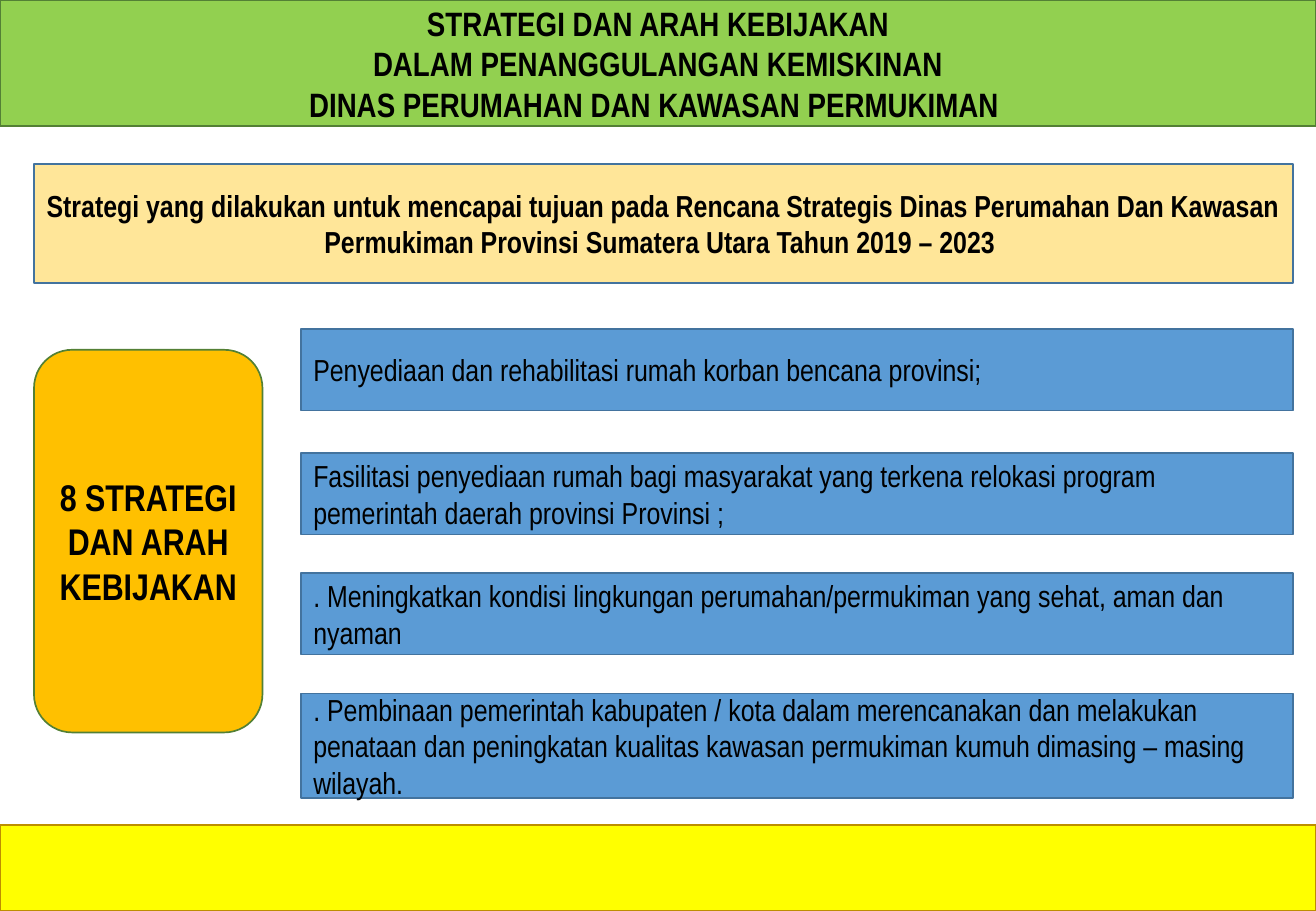
from dataclasses import dataclass

import pptx
import pptx.dml.color
import pptx.enum.shapes
import pptx.enum.text
import pptx.presentation
import pptx.shapes.autoshape
import pptx.slide
import pptx.util

RGBColor = pptx.dml.color.RGBColor
Align = pptx.enum.text.PP_ALIGN
Preset = pptx.enum.shapes.MSO_SHAPE

BLACK = RGBColor(0x00, 0x00, 0x00)
GREEN = RGBColor(0x92, 0xD0, 0x50)
DARK_GREEN = RGBColor(0x53, 0x80, 0x35)
YELLOW = RGBColor(0xFF, 0xFF, 0x00)
DARK_GOLD = RGBColor(0xBD, 0x8E, 0x00)
CREAM = RGBColor(0xFF, 0xE6, 0x99)
BLUE = RGBColor(0x5B, 0x9B, 0xD5)
DARK_BLUE = RGBColor(0x43, 0x73, 0x9E)
ORANGE = RGBColor(0xFF, 0xC0, 0x00)

FONT = "Arial Narrow"
CELL = pptx.util.Inches(0.1)
COLUMNS = 108.3
ROWS = 75
LEFT = 2.8
RIGHT = 106.4
STRATEGY_LEFT = 24.8


@dataclass(frozen=True)
class Panel:
    column: float
    row: float
    columns: float
    rows: float
    fill: RGBColor
    line: RGBColor
    text: str = ""
    size: int = 18
    bold: bool = True
    align: Align = Align.CENTER
    preset: Preset = Preset.RECTANGLE


def strategy(row: float, rows: float, text: str) -> Panel:
    return Panel(STRATEGY_LEFT, row, RIGHT - STRATEGY_LEFT, rows, BLUE, DARK_BLUE,
                 text, bold=False, align=Align.LEFT)


HEADER = Panel(
    0, 0, COLUMNS, 10.4, GREEN, DARK_GREEN,
    "STRATEGI DAN ARAH KEBIJAKAN\vDALAM PENANGGULANGAN KEMISKINAN\n"
    "DINAS PERUMAHAN DAN KAWASAN PERMUKIMAN ", 20)

PANELS = [
    Panel(0, 67.9, COLUMNS, ROWS - 67.9, YELLOW, DARK_GOLD),
    Panel(LEFT, 13.5, RIGHT - LEFT, 9.8, CREAM, DARK_BLUE,
          "Strategi yang dilakukan untuk mencapai tujuan pada Rencana Strategis Dinas "
          "Perumahan Dan Kawasan Permukiman Provinsi Sumatera Utara Tahun 2019 – 2023 "),
    strategy(27.1, 6.7, "Penyediaan dan rehabilitasi rumah korban bencana provinsi;"),
    strategy(37.3, 6.7, "Fasilitasi penyediaan rumah bagi masyarakat yang terkena relokasi "
                        "program pemerintah daerah provinsi Provinsi ;"),
    strategy(47.2, 6.7, ". Meningkatkan kondisi lingkungan perumahan/permukiman yang sehat, "
                        "aman dan nyaman"),
    strategy(57.1, 8.6, ". Pembinaan pemerintah kabupaten / kota dalam merencanakan dan "
                        "melakukan penataan dan peningkatan kualitas kawasan permukiman "
                        "kumuh dimasing – masing wilayah."),
    Panel(LEFT, 28.8, 18.8, 31.5, ORANGE, DARK_GREEN, "8 STRATEGI DAN ARAH KEBIJAKAN",
          22, preset=Preset.ROUNDED_RECTANGLE),
]


def grid(cells: float) -> pptx.util.Emu:
    return pptx.util.Emu(round(cells * CELL))


def format_panel(shape: pptx.shapes.autoshape.Shape, panel: Panel) -> None:
    shape.left, shape.top = grid(panel.column), grid(panel.row)
    shape.width, shape.height = grid(panel.columns), grid(panel.rows)
    shape.shadow.inherit = False
    shape.fill.solid()
    shape.fill.fore_color.rgb = panel.fill
    shape.line.color.rgb = panel.line
    shape.line.width = pptx.util.Pt(1)
    if not panel.text:
        return
    text_frame = shape.text_frame
    text_frame.text = panel.text
    text_frame.word_wrap = True
    text_frame.auto_size = pptx.enum.text.MSO_AUTO_SIZE.NONE
    text_frame.vertical_anchor = pptx.enum.text.MSO_ANCHOR.MIDDLE
    for paragraph in text_frame.paragraphs:
        paragraph.alignment = panel.align
        paragraph.font.size = pptx.util.Pt(panel.size)
        for run in paragraph.runs:
            run.font.name = FONT
            run.font.size = pptx.util.Pt(panel.size)
            run.font.bold = panel.bold
            run.font.color.rgb = BLACK


def add_panel(slide: pptx.slide.Slide, panel: Panel) -> None:
    shape = slide.shapes.add_shape(panel.preset, 0, 0, CELL, CELL)
    format_panel(shape, panel)


def main() -> None:
    presentation = pptx.Presentation()
    presentation.slide_width = grid(COLUMNS)
    presentation.slide_height = grid(ROWS)
    title_only = presentation.slide_layouts.get_by_name("Title Only")
    slide = presentation.slides.add_slide(title_only)
    format_panel(slide.shapes.title, HEADER)
    for panel in PANELS:
        add_panel(slide, panel)
    presentation.save("out.pptx")


if __name__ == "__main__":
    main()
